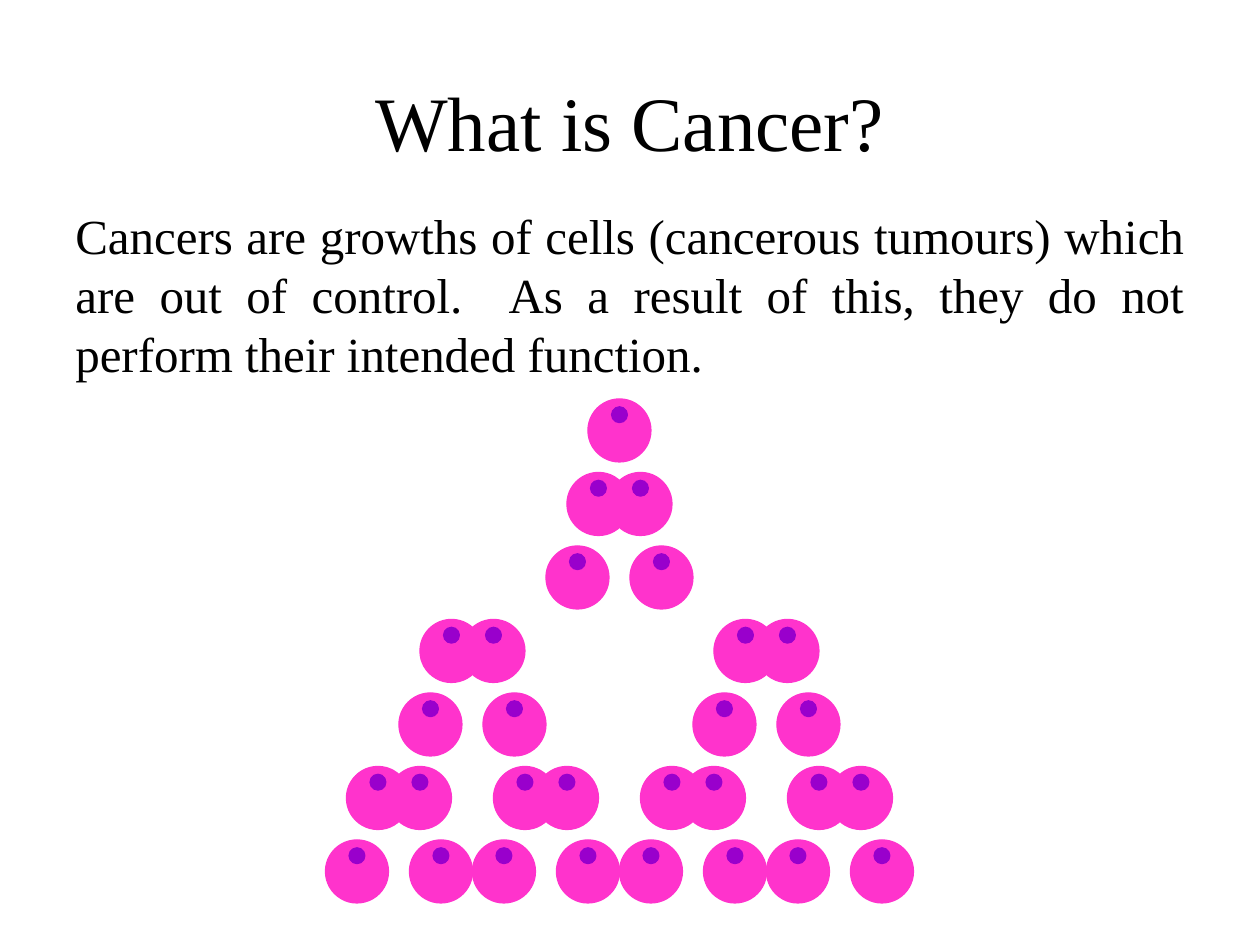
"""Build the slide that explains cancer with a tree of dividing cells."""
from pptx import Presentation
from pptx import util as u
from pptx.dml import color
from pptx.enum import shapes, text

HUES = {"ink": "000000", "cell": "FF33CC", "core": "9900CC"}
FONT = "Times New Roman"


def write(frame, words, size, align, anchor, fit):
    frame.word_wrap = True
    frame.auto_size = fit
    frame.vertical_anchor = anchor
    para = frame.paragraphs[0]
    para.alignment = align
    run = para.add_run()
    run.text = words
    run.font.name = FONT
    run.font.size = u.Pt(size)
    run.font.color.rgb = color.RGBColor.from_string(HUES["ink"])


class Page:
    def __init__(self, deck):
        self.slide = deck.slides.add_slide(deck.slide_layouts[5])

    def title(self, words, x, y, w, h):
        box = self.slide.shapes.title
        box.left, box.top, box.width, box.height = map(u.Pt, (x, y, w, h))
        write(box.text_frame, words, 44, text.PP_ALIGN.CENTER,
              text.MSO_ANCHOR.MIDDLE, text.MSO_AUTO_SIZE.NONE)

    def prose(self, words, x, y, w, h):
        box = self.slide.shapes.add_textbox(*map(u.Pt, (x, y, w, h)))
        write(box.text_frame, words, 28, text.PP_ALIGN.JUSTIFY,
              text.MSO_ANCHOR.TOP, text.MSO_AUTO_SIZE.SHAPE_TO_FIT_TEXT)

    def group(self):
        return self.slide.shapes.add_group_shape()

    def disc(self, group, hue, mid, top, size):
        disc = group.shapes.add_shape(
            shapes.MSO_SHAPE.OVAL,
            *map(u.Pt, (mid - size / 2, top, size, size)))
        disc.shadow.inherit = False
        tint = color.RGBColor.from_string(HUES[hue])
        disc.fill.solid()
        disc.fill.fore_color.rgb = tint
        disc.line.color.rgb = tint
        disc.line.width = u.Pt(0.75)

    def cell(self, group, mid, top):
        self.disc(group, "cell", mid, top, 36)
        self.disc(group, "core", mid, top + 4.5, 9)

    def split(self, group, mid, top, step):
        for row, gap in enumerate((12, 24)):
            for side in (1, -1):
                self.cell(group, mid + side * gap, top + row * step)


def main():
    deck = Presentation()
    deck.slide_width, deck.slide_height = u.Pt(720), u.Pt(540)
    page = Page(deck)
    page.title("What is Cancer?", 54, 24, 612, 90)
    page.prose("Cancers are growths of cells (cancerous tumours) which are "
               "out of control.  As a result of this, they do not perform "
               "their intended function.", 36, 114, 648, 108)

    axis, top, step = 354, 228, 42
    page.cell(page.group(), axis, top)
    mids = [axis]
    for age, reach in enumerate((84, 42, 0)):
        group = page.group()
        for mid in mids:
            page.split(group, mid, top + (2 * age + 1) * step, step)
        mids = [mid + side * reach for mid in mids for side in (1, -1)]

    deck.save("out.pptx")


if __name__ == "__main__":
    main()
